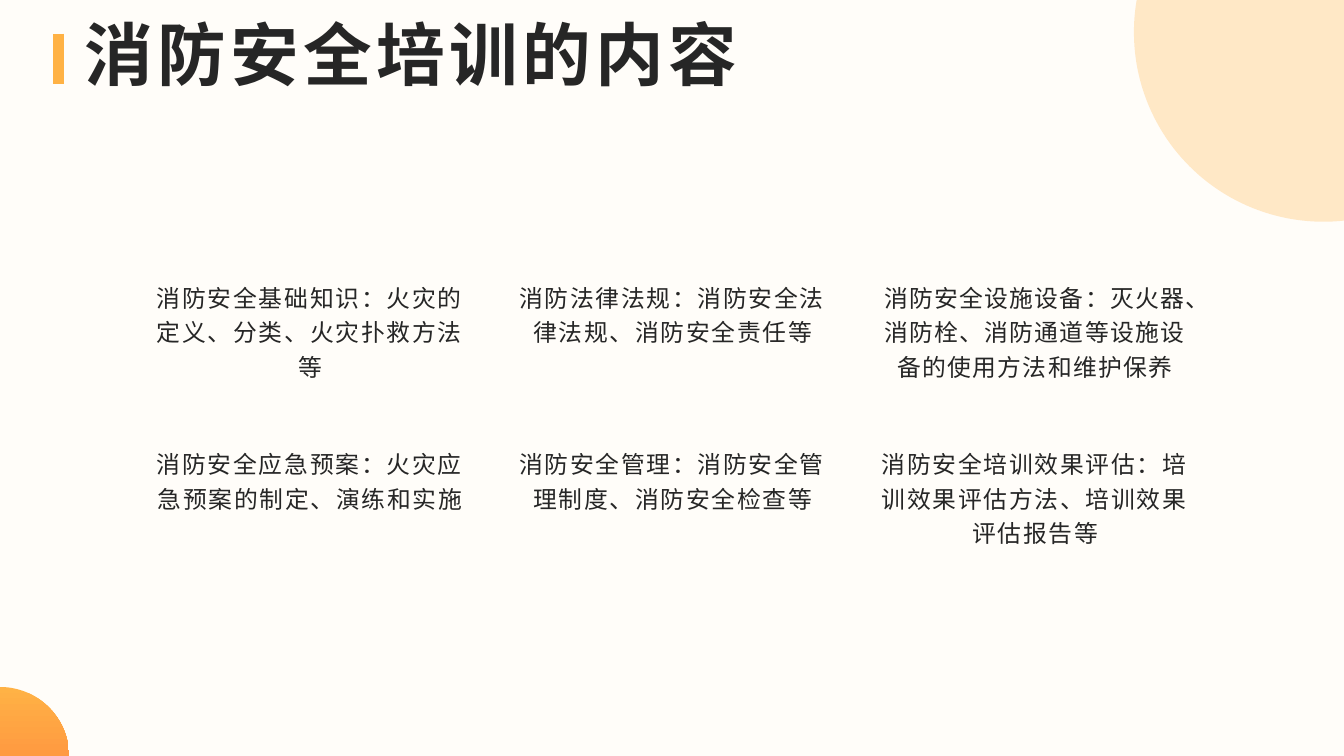
from dataclasses import dataclass
from math import cos, radians, sin

from lxml.etree import SubElement
from pptx import Presentation
from pptx.dml.color import RGBColor as Rgb
from pptx.enum.shapes import MSO_CONNECTOR as Link
from pptx.enum.text import MSO_ANCHOR as Anchor, MSO_AUTO_SIZE as Auto, PP_ALIGN as Align
from pptx.oxml.ns import qn
from pptx.util import Pt

HUES = {"paper": "FFFDF9", "ink": "262626", "gold": "FFB245", "flame": "FF9A41"}
FONT = "Noto Sans CJK SC"
WIDE, HIGH = 960, 540


@dataclass
class Topic:
    text: str
    gap: float = 1.2


@dataclass
class Disc:
    x: float
    y: float
    size: float
    start: float
    end: float
    edge: tuple[float, float]


TOPICS = [
    Topic("消防安全基础知识：火灾的定义、分类、火灾扑救方法等"),
    Topic("消防法律法规：消防安全法律法规、消防安全责任等"),
    Topic("消防安全设施设备：灭火器、消防栓、消防通道等设施设备的使用方法和维护保养", 0.9),
    Topic("消防安全应急预案：火灾应急预案的制定、演练和实施"),
    Topic("消防安全管理：消防安全管理制度、消防安全检查等"),
    Topic("消防安全培训效果评估：培训效果评估方法、培训效果评估报告等"),
]
SUN = Disc(945.4, 23, 135.4, 83.8, 189.8, (WIDE, 0))
EMBER = Disc(0, HIGH, 49.3, -90, 0, (0, HIGH))


def hue(name: str) -> Rgb:
    return Rgb.from_string(HUES[name])


def place(shape, x: float, y: float, wide: float, high: float) -> None:
    shape.left, shape.top, shape.width, shape.height = map(Pt, (x, y, wide, high))


def write(shape, text: str, *, size: float, gap: float, bold: bool = False,
          align: Align = Align.LEFT, anchor: Anchor = Anchor.TOP,
          lead: float = 1.0, after: float = 0,
          inset: tuple[float, float] = (7.2, 3.6)) -> None:
    frame = shape.text_frame
    frame.word_wrap = True
    frame.auto_size = Auto.NONE
    frame.vertical_anchor = anchor
    frame.margin_left = frame.margin_right = Pt(inset[0])
    frame.margin_top = frame.margin_bottom = Pt(inset[1])
    para = frame.paragraphs[0]
    para.alignment, para.line_spacing = align, lead
    para.space_before, para.space_after = Pt(0), Pt(after)
    run = para.add_run()
    run.text = text
    font = run.font
    font.name, font.size, font.bold = FONT, Pt(size), bold
    font.color.rgb = hue("ink")
    props = run._r.get_or_add_rPr()
    props.set("spc", str(round(gap * 100)))
    SubElement(props, qn("a:ea"), typeface=FONT)


def draw(slide, disc: Disc):
    steps = 60
    turns = [radians(disc.start + (disc.end - disc.start) * i / steps)
             for i in range(steps + 1)]
    dots = [(Pt(disc.x + disc.size * cos(t)), Pt(disc.y + disc.size * sin(t)))
            for t in turns]
    dots.append((Pt(disc.edge[0]), Pt(disc.edge[1])))
    form = slide.shapes.build_freeform(*dots[0])
    form.add_line_segments(dots[1:], close=True)
    shape = form.convert_to_shape()
    shape.shadow.inherit = False
    shape.line.fill.background()
    return shape


def main() -> None:
    deck = Presentation()
    deck.slide_width, deck.slide_height = Pt(WIDE), Pt(HIGH)
    slide = deck.slides.add_slide(deck.slide_layouts[5])
    slide.background.fill.solid()
    slide.background.fill.fore_color.rgb = hue("paper")

    sun = draw(slide, SUN)
    sun.fill.solid()
    sun.fill.fore_color.rgb = hue("gold")
    tint = sun.fill._xPr.find(qn("a:solidFill"))[0]
    SubElement(tint, qn("a:alpha"), val="28000")

    ember = draw(slide, EMBER)
    ember.fill.gradient()
    ember.fill.gradient_angle = 270
    for stop, name in zip(ember.fill.gradient_stops, ("gold", "flame")):
        stop.color.rgb = hue(name)

    title = slide.shapes.title
    place(title, 60, 12, 864, 60)
    write(title, "消防安全培训的内容", size=49, gap=3.3, bold=True,
          anchor=Anchor.MIDDLE, lead=0.9, inset=(0, 0))

    bar = slide.shapes.add_connector(Link.STRAIGHT, Pt(41.8), Pt(24), Pt(41.8), Pt(60))
    bar.line.color.rgb = hue("gold")
    bar.line.width = Pt(8)
    SubElement(bar._element.spPr, qn("a:effectLst"))

    for i, topic in enumerate(TOPICS):
        row, col = divmod(i, 3)
        box = slide.shapes.add_textbox(0, 0, 0, 0)
        place(box, 103 + 258.9 * col, 195 + 118.9 * row, 237, 91.4)
        write(box, topic.text, size=17, gap=topic.gap, align=Align.CENTER,
              lead=1.2, after=8)

    deck.save("out.pptx")


if __name__ == "__main__":
    main()
